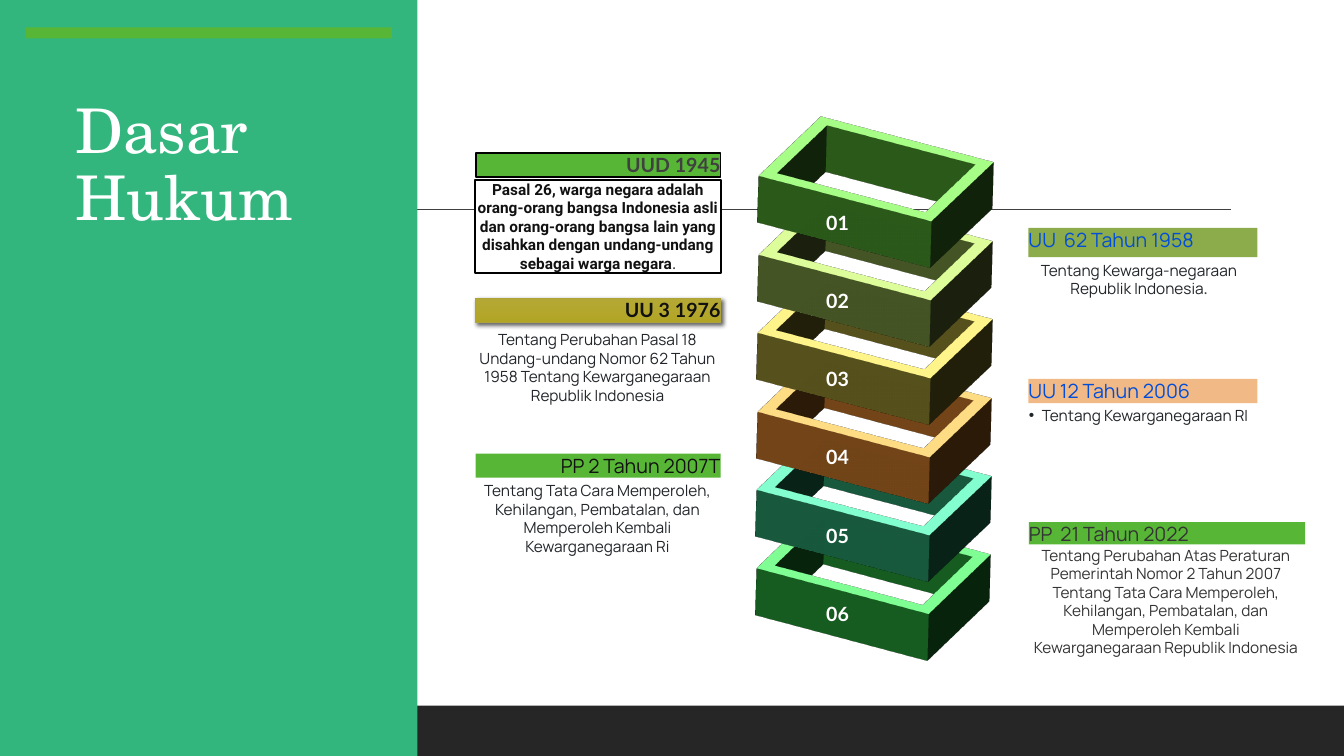
"""Build the "Dasar Hukum" slide: a stack of six open boxes with legal references."""
import lxml.etree
import pptx
import pptx.dml.color
import pptx.enum.shapes
import pptx.enum.text
import pptx.oxml
import pptx.oxml.ns
import pptx.util

Cm = pptx.util.Cm
Pt = pptx.util.Pt
RGBColor = pptx.dml.color.RGBColor
SHAPE = pptx.enum.shapes.MSO_SHAPE
ALIGN = pptx.enum.text.PP_ALIGN
ANCHOR = pptx.enum.text.MSO_ANCHOR

WHITE = RGBColor(0xFF, 0xFF, 0xFF)
BLACK = RGBColor(0x00, 0x00, 0x00)
FOOTER = RGBColor(0x26, 0x26, 0x26)
GRAY = RGBColor(0x40, 0x40, 0x40)
INK = RGBColor(0x11, 0x11, 0x11)
BODY_INK = RGBColor(0x21, 0x25, 0x29)
SOFT_INK = RGBColor(0x33, 0x33, 0x33)
LINK_BLUE = RGBColor(0x00, 0x4D, 0xDA)
TEAL = RGBColor(0x33, 0xB6, 0x7D)
GREEN = RGBColor(0x57, 0xB6, 0x36)
OLIVE = RGBColor(0x8C, 0xAB, 0x4A)
MUSTARD = RGBColor(0xAE, 0xA3, 0x3A)
MUSTARD_START = RGBColor(0xB2, 0xA5, 0x26)
MUSTARD_END = RGBColor(0xB4, 0xA8, 0x34)
ORANGE = RGBColor(0xE8, 0x8B, 0x33)
PEACH = RGBColor(0xF1, 0xB9, 0x85)
LEAF = RGBColor(0x2E, 0xBA, 0x43)

BOX_COLORS = [GREEN, OLIVE, MUSTARD, ORANGE, TEAL, LEAF]
BOX_STEP = 9.88 / 5
BOX_SHIFT = -0.07 / 5
BOX_DEPTH = Pt(38)
DEGREE = 60000


def format_text(frame, size, font, color, bold=False, align=ALIGN.LEFT, anchor=ANCHOR.TOP):
    """Format all text of a frame and clear its insets."""
    frame.word_wrap = True
    frame.auto_size = pptx.enum.text.MSO_AUTO_SIZE.NONE
    frame.vertical_anchor = anchor
    frame.margin_left = frame.margin_right = frame.margin_top = frame.margin_bottom = 0
    for paragraph in frame.paragraphs:
        paragraph.alignment = align
        for run in paragraph.runs:
            format_run(run, size, font, color, bold)


def format_run(run, size, font, color, bold=False):
    """Set the font of one run."""
    run.font.size = Pt(size)
    run.font.name = font
    run.font.bold = bold
    run.font.color.rgb = color


def place(shape, box):
    """Move and size a shape by a box in centimetres."""
    shape.left, shape.top, shape.width, shape.height = map(Cm, box)


def add_bar(slide, box, fill, outline=None, preset=SHAPE.RECTANGLE):
    """Add a flat filled shape."""
    bar = slide.shapes.add_shape(preset, *map(Cm, box))
    bar.shadow.inherit = False
    bar.fill.solid()
    bar.fill.fore_color.rgb = fill
    if outline is None:
        bar.line.fill.background()
    else:
        bar.line.color.rgb = outline
        bar.line.width = Pt(1.25)
    return bar


def add_heading(slide, box, text, fill, color, font="Manrope", bold=False,
                align=ALIGN.LEFT, outline=None):
    """Add a coloured bar that names a law."""
    heading = add_bar(slide, box, fill, outline)
    heading.text_frame.text = text
    format_text(heading.text_frame, 14, font, color, bold, align)
    return heading


def add_text(slide, box, text, size=11, font="Manrope", color=BODY_INK, bold=False):
    """Add a centred text box."""
    textbox = slide.shapes.add_textbox(*map(Cm, box))
    textbox.text_frame.text = text
    format_text(textbox.text_frame, size, font, color, bold, ALIGN.CENTER)
    return textbox


def add_full_stop(textbox):
    """Close a description with a lighter full stop."""
    stop = textbox.text_frame.paragraphs[0].add_run()
    stop.text = "."
    format_run(stop, 11, "Lato", GRAY)


def add_open_box(slide, index, color):
    """Add one frame of the stack, tilted and extruded into an open box."""
    box = add_bar(slide, (19.66 + index * BOX_SHIFT, 2.51 + index * BOX_STEP, 4.85, 3.51),
                  color, preset=SHAPE.FRAME)
    box.adjustments[0] = 0.098
    namespace = pptx.oxml.ns.nsdecls("a")
    box.element.spPr.append(pptx.oxml.parse_xml(
        f'<a:scene3d {namespace}><a:camera prst="orthographicFront">'
        f'<a:rot lat="{308 * DEGREE}" lon="{38 * DEGREE}" rev="{round(313.6 * DEGREE)}"/></a:camera>'
        '<a:lightRig rig="threePt" dir="t"/></a:scene3d>'))
    box.element.spPr.append(pptx.oxml.parse_xml(f'<a:sp3d {namespace} extrusionH="{BOX_DEPTH}"/>'))


def add_rule(slide):
    """Add the thin horizontal line."""
    rule = slide.shapes.add_connector(
        pptx.enum.shapes.MSO_CONNECTOR.STRAIGHT, Cm(3.33), Cm(5.28), Cm(31.01), Cm(5.28))
    rule.line.color.rgb = GRAY
    rule.line.width = Pt(1)
    lxml.etree.SubElement(rule.element.spPr, pptx.oxml.ns.qn("a:effectLst"))


def add_glow(heading):
    """Give a heading a gradient, a thin outline and a soft shadow."""
    heading.fill.gradient()
    for stop, color in zip(heading.fill.gradient_stops, (MUSTARD_START, MUSTARD_END)):
        stop.color.rgb = color
    heading.line.color.rgb = MUSTARD
    heading.line.width = Pt(1)
    effects = heading.element.spPr.find(pptx.oxml.ns.qn("a:effectLst"))
    effects.append(pptx.oxml.parse_xml(
        f'<a:outerShdw {pptx.oxml.ns.nsdecls("a")} blurRad="{Pt(3)}" dist="{Pt(2)}" dir="{45 * DEGREE}">'
        '<a:srgbClr val="000000"><a:alpha val="60000"/></a:srgbClr></a:outerShdw>'))


def fill_title(title):
    """Fill the title placeholder and bring it above the panel."""
    title.element.getparent().append(title.element)
    place(title, (1.9, 2, 7.24, 4.01))
    title.text_frame.text = "Dasar Hukum"
    format_text(title.text_frame, 44, "TeX Gyre Schola", WHITE, anchor=ANCHOR.MIDDLE)
    title.text_frame.margin_top, title.text_frame.margin_bottom = Cm(0.71), Cm(0.3)
    title.text_frame.paragraphs[0].line_spacing = 0.9


def fill_bullet(body):
    """Fill the body placeholder with the bulleted description."""
    place(body, (25.8, 10.24, 5.79, 0.94))
    body.text_frame.text = "Tentang Kewarganegaraan RI"
    format_text(body.text_frame, 11, "Manrope", BODY_INK, align=ALIGN.CENTER)
    item = body.text_frame.paragraphs[0]
    item.space_before = Pt(0)
    properties = item._p.get_or_add_pPr()
    properties.set("marL", str(Cm(0.33)))
    properties.set("indent", str(-Cm(0.33)))


def main():
    """Build and save the slide."""
    deck = pptx.Presentation()
    deck.slide_width, deck.slide_height = Cm(33.87), Cm(19.05)
    slide = deck.slides.add_slide(deck.slide_layouts[1])
    add_bar(slide, (0, 17.78, 33.87, 1.27), FOOTER)
    add_rule(slide)
    add_bar(slide, (0, 0, 10.52, 19.05), TEAL)
    add_bar(slide, (0.66, 0.69, 9.22, 0.28), GREEN)
    fill_title(slide.shapes.title)
    fill_bullet(slide.placeholders[1])

    for index, color in reversed(list(enumerate(BOX_COLORS))):
        add_open_box(slide, index, color)
    for index in range(len(BOX_COLORS)):
        add_text(slide, (19.13, 5.31 + index * 1.97, 3.96, 0.61),
                 f"{index + 1:02}", 14, "Lato", WHITE, True)

    article = add_bar(slide, (11.97, 4.53, 6.2, 2.36), WHITE, BLACK)
    article.text_frame.text = ("Pasal 26, warga negara adalah orang-orang bangsa Indonesia asli dan orang-orang "
                               "bangsa lain yang disahkan dengan undang-undang sebagai warga negara")
    format_text(article.text_frame, 11, "Roboto", INK, True, ALIGN.CENTER)
    add_full_stop(article)
    add_heading(slide, (11.99, 3.86, 6.17, 0.61), "UUD 1945", GREEN, GRAY, "Lato", True, ALIGN.RIGHT, BLACK)
    add_glow(add_heading(slide, (11.99, 7.52, 6.17, 0.61), "UU 3 1976", MUSTARD, INK, "Lato", True, ALIGN.RIGHT))
    add_text(slide, (11.96, 8.33, 6.2, 2.36), "Tentang Perubahan Pasal 18 Undang-undang Nomor 62 Tahun 1958 "
             "Tentang Kewarganegaraan Republik Indonesia")
    add_heading(slide, (11.99, 11.43, 6.17, 0.61), "PP 2 Tahun 2007T", GREEN, INK, align=ALIGN.RIGHT)
    add_text(slide, (11.96, 12.13, 6.2, 1.88), "Tentang Tata Cara Memperoleh, Kehilangan, Pembatalan, dan "
             "Memperoleh Kembali Kewarganegaraan Ri")
    add_heading(slide, (25.92, 5.74, 5.77, 0.74), "UU  62 Tahun 1958", OLIVE, LINK_BLUE)
    add_full_stop(add_text(slide, (25.81, 6.58, 5.79, 0.94), "Tentang Kewarga-negaraan Republik Indonesia"))
    add_heading(slide, (25.92, 9.55, 5.77, 0.61), "UU 12 Tahun 2006", PEACH, LINK_BLUE)
    add_heading(slide, (25.93, 13.16, 6.96, 0.56), "PP  21 Tahun 2022", GREEN, SOFT_INK)
    add_text(slide, (25.89, 13.75, 6.99, 3.3), "Tentang Perubahan Atas Peraturan Pemerintah Nomor 2 Tahun 2007 "
             "Tentang Tata Cara Memperoleh, Kehilangan, Pembatalan, dan Memperoleh Kembali "
             "Kewarganegaraan Republik Indonesia", color=SOFT_INK)
    deck.save("out.pptx")


if __name__ == "__main__":
    main()
